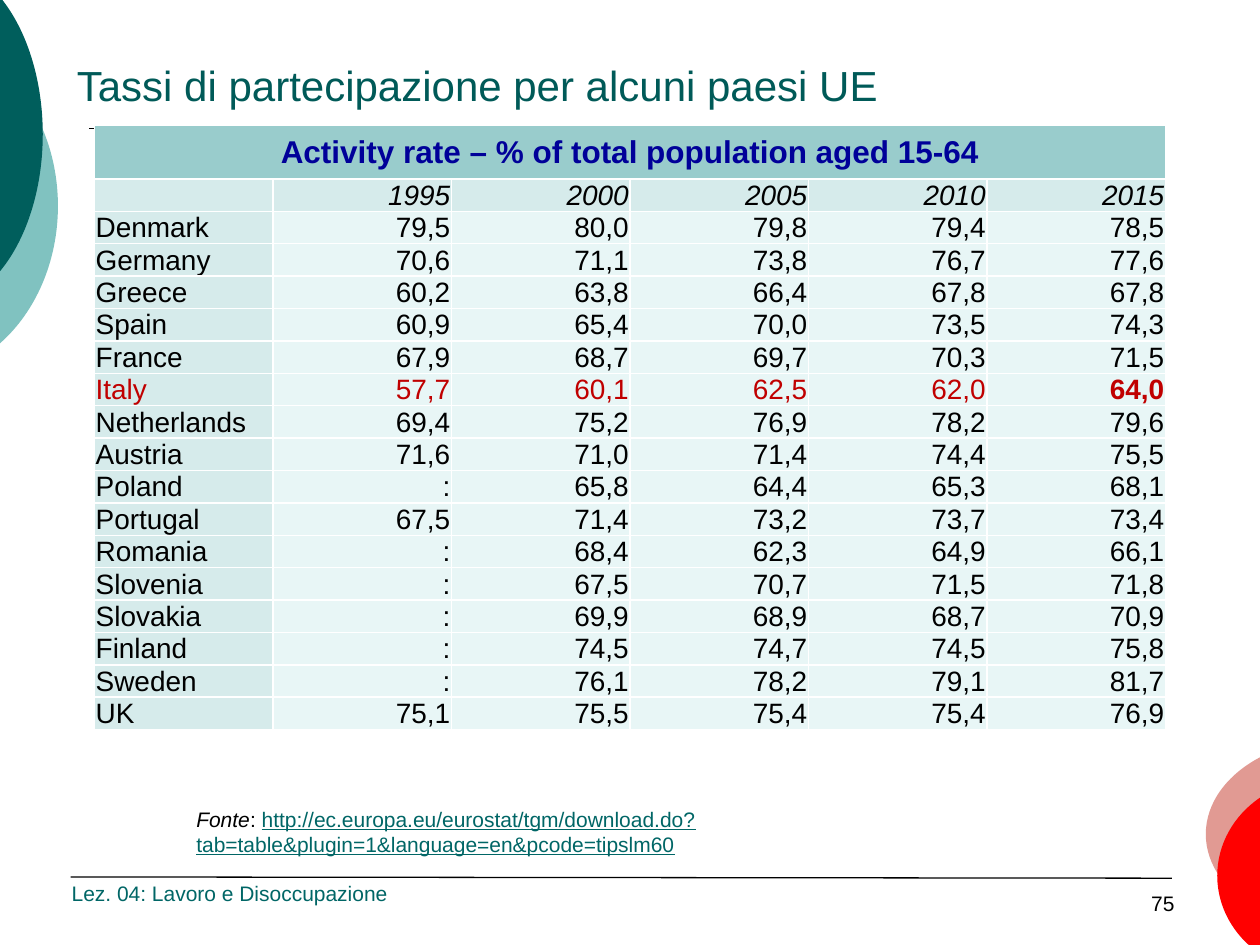
from lxml.etree import SubElement
from pptx import Presentation
from pptx.dml.color import RGBColor
from pptx.enum.shapes import MSO_CONNECTOR as CONN
from pptx.enum.text import MSO_ANCHOR as ANCHOR, MSO_AUTO_SIZE as AUTO, PP_ALIGN as ALIGN
from pptx.oxml.ns import qn
from pptx.util import Inches, Pt

FONT = "Arial"
TEAL = "006666"
HEAD_FILL, LABEL_FILL, BODY_FILL = "99CCCC", "D6EBEB", "E8F6F6"
TITLE = "Tassi di partecipazione per alcuni paesi UE"
TABLE_TITLE = "Activity rate – % of total population aged 15-64"
URL = ("http://ec.europa.eu/eurostat/tgm/download.do?"
       "tab=table&plugin=1&language=en&pcode=tipslm60")
YEARS = ["", "1995", "2000", "2005", "2010", "2015"]
RATES = """Denmark 79,5 80,0 79,8 79,4 78,5
Germany 70,6 71,1 73,8 76,7 77,6
Greece 60,2 63,8 66,4 67,8 67,8
Spain 60,9 65,4 70,0 73,5 74,3
France 67,9 68,7 69,7 70,3 71,5
Italy 57,7 60,1 62,5 62,0 64,0
Netherlands 69,4 75,2 76,9 78,2 79,6
Austria 71,6 71,0 71,4 74,4 75,5
Poland : 65,8 64,4 65,3 68,1
Portugal 67,5 71,4 73,2 73,7 73,4
Romania : 68,4 62,3 64,9 66,1
Slovenia : 67,5 70,7 71,5 71,8
Slovakia : 69,9 68,9 68,7 70,9
Finland : 74,5 74,7 74,5 75,8
Sweden : 76,1 78,2 79,1 81,7
UK 75,1 75,5 75,4 75,4 76,9"""


def rgb(color):
    return RGBColor.from_string(color)


def add_run(p, text, color="000000", **formats):
    r = p.add_run()
    r.text = text
    r.font.color.rgb = rgb(color)
    for name, value in {"name": FONT, "size": Pt(12), **formats}.items():
        setattr(r.font, name, value)


def add_text(slide, box, runs, anchor=ANCHOR.BOTTOM, align=ALIGN.LEFT, fit=AUTO.NONE):
    tf = slide.shapes.add_textbox(*map(Inches, box)).text_frame
    tf.word_wrap = True
    tf.auto_size = fit
    tf.vertical_anchor = anchor
    p = tf.paragraphs[0]
    p.alignment = align
    for text, formats in runs:
        add_run(p, text, **formats)


def add_line(slide, x1, y1, x2, y2, width):
    s = slide.shapes.add_connector(CONN.STRAIGHT, *map(Inches, (x1, y1, x2, y2)))
    s.line.color.rgb = rgb("000000")
    s.line.width = Pt(width)
    SubElement(s._element.spPr, qn("a:effectLst"))


def add_disc_part(slide, box, depth, half, color, rotation=0):
    """Right-hand part of a disc in its box: depth across, half its height from the middle."""
    left, top, w, h = box
    cut, mid = w - depth, h / 2
    inner, c1, c2 = cut + 0.62 * depth, 0.77 * half, 0.4 * half
    fb = slide.shapes.build_freeform(0, 0)
    fb.add_line_segments([(Inches(w), 0), (Inches(w), Inches(h))], close=True)
    s = fb.convert_to_shape()
    s.left, s.top, s.width, s.height = map(Inches, box)

    # Two mirrored curves that meet at the right edge of the box
    outline = next(s._element.iter(qn("a:path")))
    for child in list(outline):
        outline.remove(child)
    outline.set("w", str(Inches(w)))
    outline.set("h", str(Inches(h)))
    for tag, points in [
            ("moveTo", [(cut, mid - half)]),
            ("cubicBezTo", [(inner, mid - c1), (w, mid - c2), (w, mid)]),
            ("cubicBezTo", [(w, mid + c2), (inner, mid + c1), (cut, mid + half)]),
            ("lnTo", [(cut, mid - half)]),
            ("close", [])]:
        step = SubElement(outline, qn(f"a:{tag}"))
        for x, y in points:
            SubElement(step, qn("a:pt"), x=str(Inches(x)), y=str(Inches(y)))

    s.rotation = rotation
    s.shadow.inherit = False
    s.fill.solid()
    s.fill.fore_color.rgb = rgb(color)
    s.line.fill.background()


def add_decoration(slide):
    add_disc_part(slide, (-1.69, 0.31, 2.15, 2.65), 0.46, 1.09, "80C2C0")
    add_disc_part(slide, (-1.27, -0.27, 1.61, 2.67), 0.35, 1.1, "005E5C")
    add_line(slide, 0.71, 1.02, 4.53, 1.02, 1)
    add_line(slide, 0.56, 6.96, 9.3, 6.97, 0.75)
    add_disc_part(slide, (9.57, 5.88, 2.04, 1.48), 0.43, 0.61, "E19A93", 180)
    add_disc_part(slide, (9.66, 6.2, 1.53, 1.5), 0.34, 0.62, "FF0000", 180)


def add_title(slide, box):
    sp = slide.shapes.title
    sp.left, sp.top, sp.width, sp.height = map(Inches, box)
    tf = sp.text_frame
    tf.vertical_anchor = ANCHOR.BOTTOM
    p = tf.paragraphs[0]
    p.alignment = ALIGN.LEFT
    add_run(p, TITLE, "005A58", size=Pt(24))


def fill_cell(cell, text, fill, align, anchor=ANCHOR.BOTTOM, **formats):
    cell.margin_left = cell.margin_right = cell.margin_top = Inches(0.01)
    cell.margin_bottom = 0
    cell.vertical_anchor = anchor
    p = cell.text_frame.paragraphs[0]
    p.alignment = align
    if text:
        add_run(p, text, **formats)
    else:
        end = SubElement(p._p, qn("a:endParaRPr"), sz="1600")
        SubElement(end, qn("a:latin"), typeface=FONT)
    # White borders go before the fill in the cell properties
    tc_pr = cell._tc.get_or_add_tcPr()
    for side in ("lnL", "lnR", "lnT", "lnB"):
        ln = SubElement(tc_pr, qn(f"a:{side}"), w=str(Pt(1)))
        SubElement(SubElement(ln, qn("a:solidFill")), qn("a:srgbClr"), val="FFFFFF")
    cell.fill.solid()
    cell.fill.fore_color.rgb = rgb(fill)


def add_rates_table(slide, box):
    rows = [YEARS] + [line.split() for line in RATES.splitlines()]
    n_cols = len(YEARS)
    frame = slide.shapes.add_table(len(rows) + 1, n_cols, *map(Inches, box))
    table = frame.table
    for col in table.columns:
        col.width = int(Inches(box[2]) / n_cols)
    for i, row in enumerate(table.rows):
        row.height = Inches(0.18 if i else 0.43)
    frame.height = Inches(box[3])

    # Heading across all columns
    table.cell(0, 0).merge(table.cell(0, n_cols - 1))
    fill_cell(table.cell(0, 0), TABLE_TITLE, HEAD_FILL, ALIGN.CENTER, ANCHOR.MIDDLE,
              color="000099", size=Pt(18), bold=True)

    # Years, then one row per country
    for i, values in enumerate(rows):
        italy = values[0] == "Italy"
        for j, text in enumerate(values):
            fill_cell(table.cell(i + 1, j), text,
                      BODY_FILL if i and j else LABEL_FILL,
                      ALIGN.RIGHT if j else ALIGN.LEFT,
                      color="C00000" if italy else "000000", size=Pt(16),
                      bold=italy and j == n_cols - 1, italic=i == 0)


def add_footer(slide):
    add_text(slide, (8.15, 6.82, 1.27, 0.5), [("75", {})], align=ALIGN.RIGHT)
    add_text(slide, (0.47, 6.91, 3.95, 0.33),
             [("Lez. 04: Lavoro e Disoccupazione", {"color": TEAL})])
    add_text(slide, (1.46, 6.35, 7.9, 0.3),
             [("Fonte", {"italic": True}), (": ", {}),
              (URL, {"color": TEAL, "underline": True})],
             ANCHOR.TOP, fit=AUTO.SHAPE_TO_FIT_TEXT)


def main():
    prs = Presentation()
    prs.slide_width, prs.slide_height = Inches(10), Inches(7.5)
    slide = prs.slides.add_slide(prs.slide_layouts[5])
    add_decoration(slide)
    add_title(slide, (0.51, 0.05, 9, 0.87))
    add_rates_table(slide, (0.75, 0.99, 8.5, 5.14))
    add_footer(slide)
    prs.save("out.pptx")


if __name__ == "__main__":
    main()
